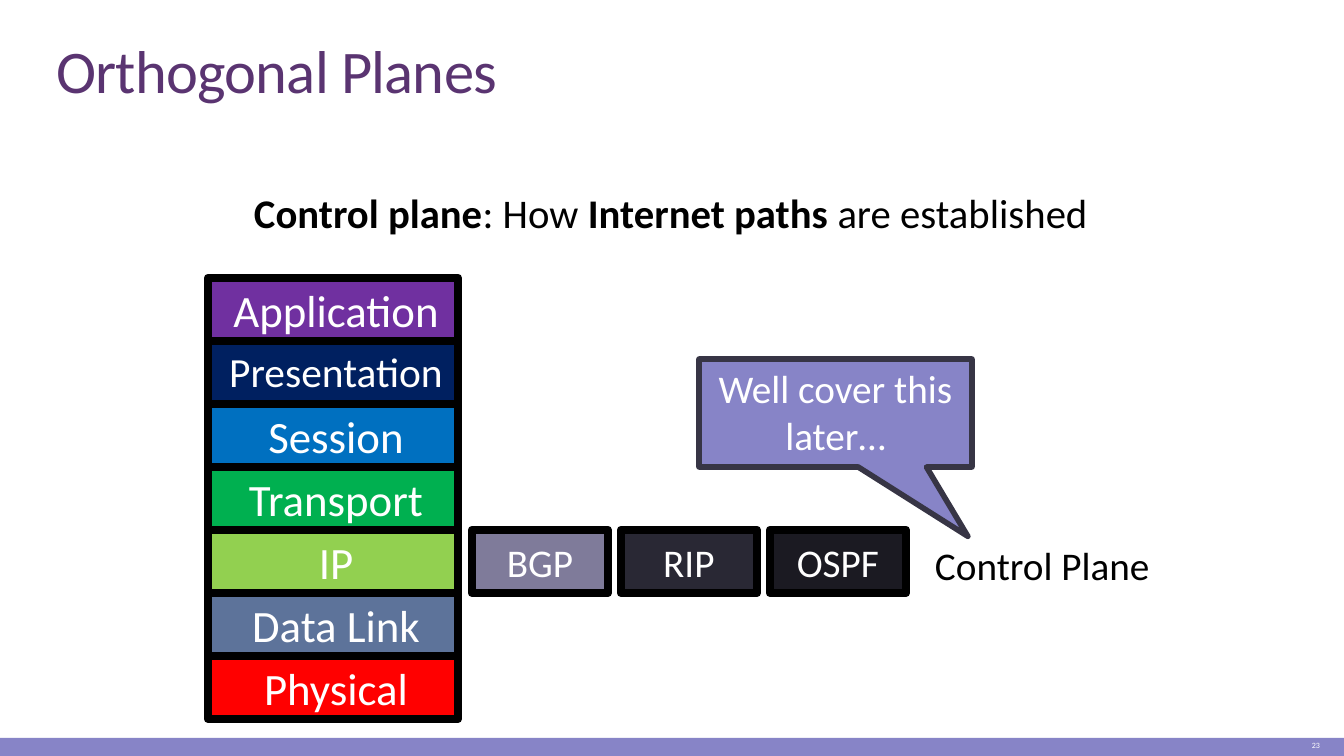
from dataclasses import dataclass

from pptx import Presentation
from pptx.dml.color import RGBColor
from pptx.enum.shapes import MSO_SHAPE
from pptx.enum.text import MSO_ANCHOR, PP_ALIGN
from pptx.util import Emu, Pt


@dataclass(frozen=True)
class Theme:
    """Colours, font and type sizes of the slide."""
    font: str = "Calibri"
    title: str = "5A3471"
    accent: str = "8784C7"
    outline: str = "373545"
    black: str = "000000"
    white: str = "FFFFFF"
    title_size: float = 32.4
    lead_size: float = 21.8
    layer_size: float = 24
    tight_size: float = 22.2
    body_size: float = 21
    page_size: float = 4.3


THEME = Theme()
LAYERS = [
    ("Application", "7030A0"),
    ("Presentation", "002060"),
    ("Session", "0070C0"),
    ("Transport", "00B050"),
    ("IP", "92D050"),
    ("Data Link", "5D739A"),
    ("Physical", "FF0000"),
]
PROTOCOLS = [("BGP", "7F7B9A"), ("RIP", "292834"), ("OSPF", "1B1A22")]
STACK_TOP, ROW_H = 278, 63
IP_ROW = 4


def px(n):
    """Turn pixels into EMU."""
    return Emu(round(n * 914400 / 134.4))


def write(tf, text, *, size, color, align=PP_ALIGN.LEFT, anchor=MSO_ANCHOR.TOP,
          inset=(13, 7, 13, 7), wrap=True, leading=None, spacing=None):
    """Fill a text frame with a string or a list of (text, bold) runs."""
    tf.word_wrap = wrap
    tf.vertical_anchor = anchor
    tf.margin_left, tf.margin_top, tf.margin_right, tf.margin_bottom = map(px, inset)
    p = tf.paragraphs[0]
    p.alignment = align
    p.line_spacing = leading
    for part, bold in [(text, False)] if isinstance(text, str) else text:
        r = p.add_run()
        r.text = part
        r.font.name = THEME.font
        r.font.size = Pt(size)
        r.font.bold = bold
        r.font.color.rgb = RGBColor.from_string(color)
        if spacing is not None:
            r._r.get_or_add_rPr().set("spc", str(round(spacing * 100)))


class Canvas:
    """Draws themed elements on the current slide."""

    def __init__(self, s):
        """Keep the slide to draw on."""
        self.s = s

    def text(self, box, text, **fmt):
        """Add a text box."""
        sp = self.s.shapes.add_textbox(*map(px, box))
        write(sp.text_frame, text, **fmt)

    def shape(self, box, fill, kind=MSO_SHAPE.RECTANGLE, line=None, width=4.5):
        """Add a filled preset shape with an optional outline."""
        sp = self.s.shapes.add_shape(kind, *map(px, box))
        sp.shadow.inherit = False
        sp.fill.solid()
        sp.fill.fore_color.rgb = RGBColor.from_string(fill)
        if line:
            sp.line.color.rgb = RGBColor.from_string(line)
            sp.line.width = Pt(width)
        else:
            sp.line.fill.background()
        return sp

    def block(self, box, fill, text, **fmt):
        """Add an outlined rectangle with a centred white label."""
        sp = self.shape(box, fill, line=THEME.black)
        write(sp.text_frame, text, color=THEME.white, align=PP_ALIGN.CENTER, **fmt)

    def callout(self, box, text, tip):
        """Add a speech callout whose tip is relative to its centre."""
        sp = self.shape(box, THEME.accent, MSO_SHAPE.RECTANGULAR_CALLOUT,
                        THEME.outline, 3)
        sp.adjustments[0], sp.adjustments[1] = tip
        write(sp.text_frame, text, size=THEME.body_size, color=THEME.white,
              align=PP_ALIGN.CENTER, anchor=MSO_ANCHOR.MIDDLE, inset=(13, 5, 13, 9))


def main():
    """Build and save the slide."""
    prs = Presentation()
    prs.slide_width, prs.slide_height = px(1344), px(756)
    c = Canvas(prs.slides.add_slide(prs.slide_layouts[6]))

    c.shape((0, 738, 1344, 18), THEME.accent)
    c.text((43, 32, 1274, 81), "Orthogonal Planes", size=THEME.title_size,
           color=THEME.title, anchor=MSO_ANCHOR.BOTTOM, leading=0.85, spacing=-0.4)
    c.text((1188, 734, 145, 23), "23", size=THEME.page_size, color=THEME.white,
           align=PP_ALIGN.RIGHT, anchor=MSO_ANCHOR.MIDDLE)

    for i, (name, fill) in enumerate(LAYERS):
        size = THEME.tight_size if name == "Presentation" else THEME.layer_size
        c.block((208, STACK_TOP + i * ROW_H, 250, ROW_H), fill, name,
                size=size, inset=(20, 5, 14, 5))

    ip_top = STACK_TOP + IP_ROW * ROW_H
    for i, (name, fill) in enumerate(PROTOCOLS):
        c.block((472 + i * 149, ip_top, 136, ROW_H), fill, name,
                size=THEME.body_size, anchor=MSO_ANCHOR.MIDDLE)

    c.text((922, 534, 245, 60), "Control Plane", size=THEME.body_size,
           color=THEME.black, wrap=False)
    c.callout((699, 359, 273, 108), "Well cover this later…", (0.485, 1.142))
    c.text((237, 181, 868, 59),
           [("Control plane", True), (": How ", False),
            ("Internet paths", True), (" are established", False)],
           size=THEME.lead_size, color=THEME.black, align=PP_ALIGN.CENTER)

    prs.save("out.pptx")


if __name__ == "__main__":
    main()
